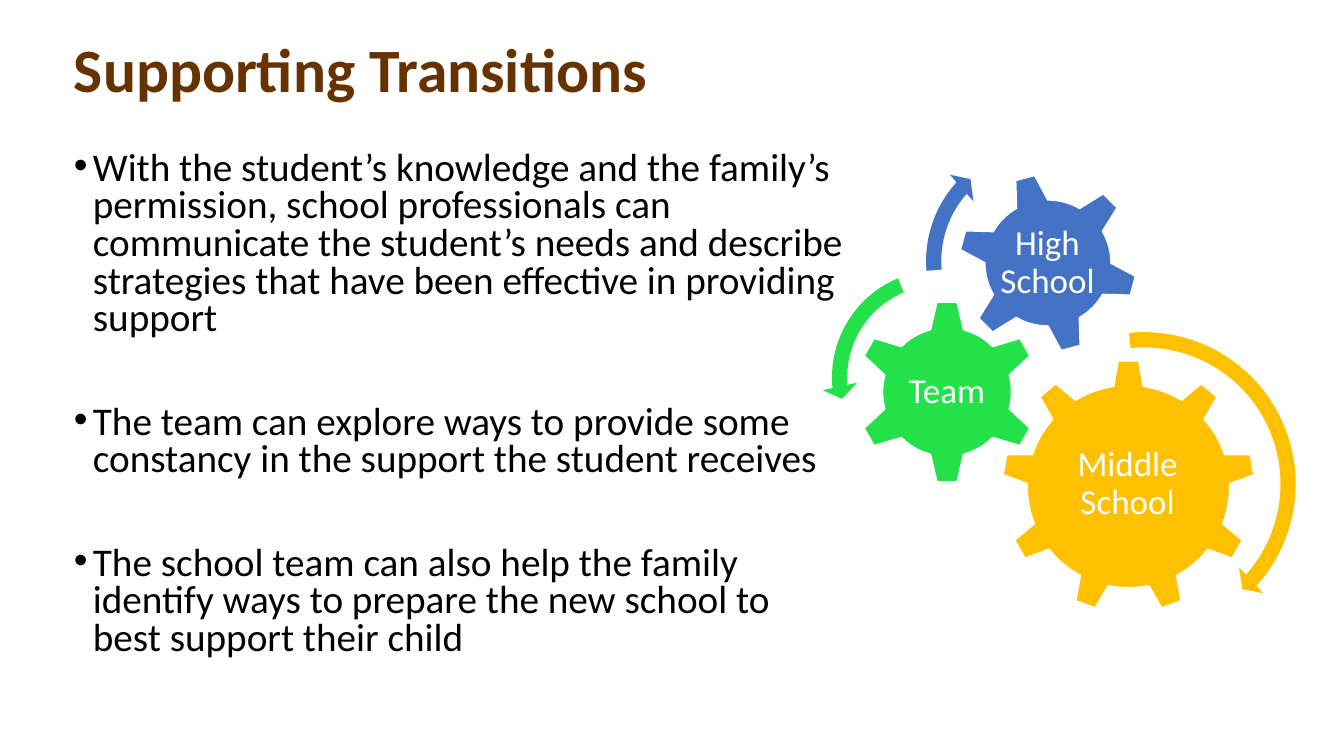
from dataclasses import dataclass

from lxml.etree import SubElement
from pptx import Presentation
from pptx.dml.color import RGBColor
from pptx.enum.shapes import MSO_SHAPE
from pptx.enum.text import MSO_ANCHOR, PP_ALIGN
from pptx.oxml.ns import qn
from pptx.shapes.autoshape import Shape
from pptx.slide import Slide
from pptx.text.text import TextFrame, _Paragraph
from pptx.util import Emu, Pt

EMU_PER_PX = 914400 / 100.8
FONT = "Calibri"
WHITE, BLACK, BROWN = "FFFFFF", "000000", "663300"
GOLD, GREEN, BLUE = "FFC000", "23E148", "4472C4"


@dataclass(frozen=True)
class Box:
    left: int
    top: int
    width: int
    height: int


@dataclass(frozen=True)
class Gear:
    preset: MSO_SHAPE
    box: Box
    color: str
    label: str
    label_box: Box
    rotation: int = 0


@dataclass(frozen=True)
class TurnArrow:
    preset: MSO_SHAPE
    box: Box
    color: str
    adjustments: tuple[float, ...]


TITLE_BOX = Box(64, 0, 1159, 146)
BODY_BOX = Box(64, 146, 792, 568)
BULLET_INDENT = 19
LABEL_INSET = 3

BULLETS = [
    "With the student’s knowledge and the family’s permission, school professionals can "
    "communicate the student’s needs and describe strategies that have been effective in "
    "providing support",
    "The team can explore ways to provide some constancy in the support the student receives",
    "The school team can also help the family identify ways to prepare the new school to "
    "best support their child",
]

GEARS = [
    Gear(MSO_SHAPE.GEAR_9, Box(1002, 360, 253, 253), GOLD,
         "Middle School", Box(1052, 419, 151, 130)),
    Gear(MSO_SHAPE.GEAR_6, Box(855, 300, 184, 184), GREEN,
         "Team", Box(901, 347, 92, 91)),
    Gear(MSO_SHAPE.GEAR_6, Box(958, 173, 180, 180), BLUE,
         "High School", Box(997, 213, 101, 101), rotation=345),
]

# Adjustments: band width, head angle, end angle, start angle, head width
TURN_ARROWS = [
    TurnArrow(MSO_SHAPE.CIRCULAR_ARROW, Box(982, 322, 324, 324), GOLD,
              (0.047, 2.99, 25.157, 158.622, 0.055)),
    TurnArrow(MSO_SHAPE.LEFT_CIRCULAR_ARROW, Box(822, 260, 235, 235), GREEN,
              (0.065, 4.3, 104.891, 148.378, 0.075)),
    TurnArrow(MSO_SHAPE.CIRCULAR_ARROW, Box(916, 134, 254, 254), BLUE,
              (0.06, 3.941, 133.138, 105.082, 0.07)),
]


def px(length: int) -> Emu:
    return Emu(round(length * EMU_PER_PX))


def rgb(color: str) -> RGBColor:
    return RGBColor.from_string(color)


def place(box: Box) -> tuple[Emu, Emu, Emu, Emu]:
    return px(box.left), px(box.top), px(box.width), px(box.height)


def add_text_frame(slide: Slide, box: Box, anchor: MSO_ANCHOR) -> TextFrame:
    frame = slide.shapes.add_textbox(*place(box)).text_frame
    frame.word_wrap = True
    frame.vertical_anchor = anchor
    return frame


def write(paragraph: _Paragraph, text: str, size: int, color: str,
          line_spacing: float, bold: bool = False) -> None:
    paragraph.line_spacing = line_spacing
    run = paragraph.add_run()
    run.text = text
    run.font.name = FONT
    run.font.size = Pt(size)
    run.font.bold = bold
    run.font.color.rgb = rgb(color)


def add_bullet(paragraph: _Paragraph) -> None:
    properties = paragraph._p.get_or_add_pPr()
    properties.set("marL", str(px(BULLET_INDENT)))
    properties.set("indent", str(-px(BULLET_INDENT)))
    SubElement(properties, qn("a:buFont"), typeface="Arial")
    SubElement(properties, qn("a:buChar"), char="•")


def add_filled_shape(slide: Slide, preset: MSO_SHAPE, box: Box, color: str) -> Shape:
    shape = slide.shapes.add_shape(preset, *place(box))
    shape.shadow.inherit = False
    shape.fill.solid()
    shape.fill.fore_color.rgb = rgb(color)
    return shape


def add_gear(slide: Slide, gear: Gear) -> None:
    shape = add_filled_shape(slide, gear.preset, gear.box, gear.color)
    shape.rotation = gear.rotation
    shape.line.color.rgb = rgb(WHITE)
    shape.line.width = Pt(1)

    # The label stays upright while the gear turns
    frame = add_text_frame(slide, gear.label_box, MSO_ANCHOR.MIDDLE)
    frame.margin_left = frame.margin_right = px(LABEL_INSET)
    frame.margin_top = frame.margin_bottom = px(LABEL_INSET)
    paragraph = frame.paragraphs[0]
    paragraph.alignment = PP_ALIGN.CENTER
    write(paragraph, gear.label, 25, WHITE, 0.9)


def add_turn_arrow(slide: Slide, arrow: TurnArrow) -> None:
    shape = add_filled_shape(slide, arrow.preset, arrow.box, arrow.color)
    shape.line.fill.background()
    for index, value in enumerate(arrow.adjustments):
        shape.adjustments[index] = value


def main() -> None:
    presentation = Presentation()
    presentation.slide_width = px(1344)
    presentation.slide_height = px(756)
    slide = presentation.slides.add_slide(presentation.slide_layouts[6])

    # Title
    title = add_text_frame(slide, TITLE_BOX, MSO_ANCHOR.MIDDLE)
    write(title.paragraphs[0], "Supporting Transitions", 44, BROWN, 0.9, bold=True)

    # Bullet list
    body = add_text_frame(slide, BODY_BOX, MSO_ANCHOR.TOP)
    for index, text in enumerate(BULLETS):
        paragraph = body.add_paragraph() if index else body.paragraphs[0]
        paragraph.space_before = Pt(47 if index else 10)
        write(paragraph, text, 28, BLACK, 0.8)
        add_bullet(paragraph)

    # Gears and the arrows around them
    for gear in GEARS:
        add_gear(slide, gear)
    for arrow in TURN_ARROWS:
        add_turn_arrow(slide, arrow)

    presentation.save("out.pptx")


if __name__ == "__main__":
    main()
